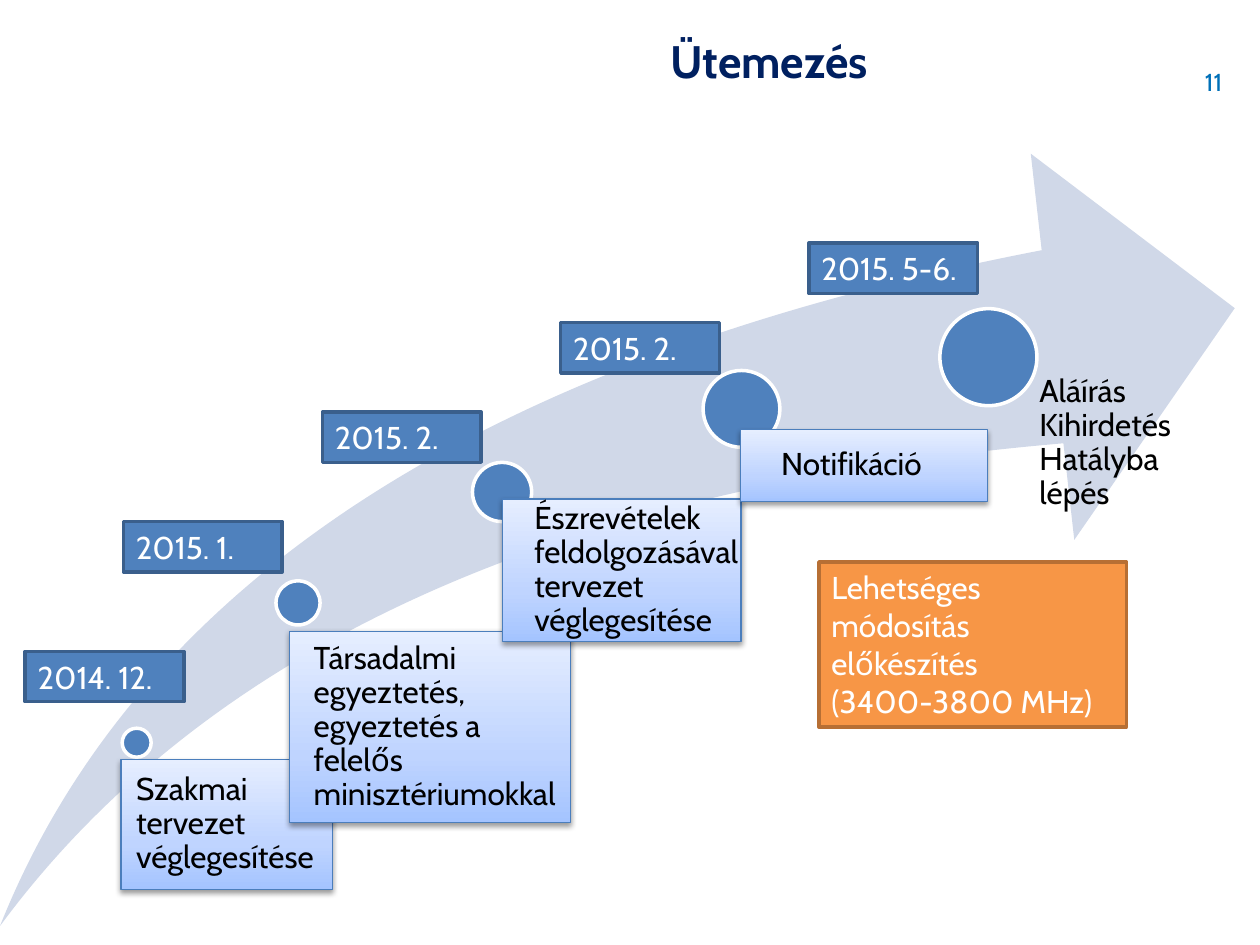
"""Build the "Ütemezés" timeline slide: five growing milestones along a swoosh arrow."""
from copy import deepcopy
from dataclasses import dataclass

from lxml import etree
from pptx import Presentation
from pptx import util as u
from pptx.dml.color import RGBColor
from pptx.enum import shapes, text
from pptx.oxml.ns import qn

FONT = "Cabin"
COLORS = {
    "white": "FFFFFF", "black": "000000", "navy": "002060", "number": "0070B8",
    "arrow": "D0D8E8", "blue": "4F81BD", "blue_edge": "3A5F8C",
    "orange": "F79646", "orange_edge": "B76F34", "card_edge": "4B7EBC",
}
CARD_STOPS = ((0, "A4C4FF"), (0.35, "BFD4FF"), (1, "E6EEFF"))


@dataclass(frozen=True)
class Area:
    left: float
    top: float
    width: float
    height: float

    def lengths(self) -> tuple:
        return tuple(u.Inches(v) for v in (self.left, self.top, self.width, self.height))


@dataclass(frozen=True)
class Milestone:
    date: str
    date_area: Area
    dot: Area
    task: str
    task_area: Area
    indent: float
    framed: bool = True


MILESTONES = (
    Milestone("2014. 12.", Area(0.2, 5.17, 1.26, 0.4), Area(0.97, 5.78, 0.23, 0.23),
              "Szakmai tervezet véglegesítése", Area(0.96, 6.03, 1.68, 1.03), 0.12),
    Milestone("2015. 1.", Area(0.98, 4.14, 1.26, 0.4), Area(2.19, 4.61, 0.35, 0.35),
              "Társadalmi egyeztetés, egyeztetés a felelős minisztériumokkal",
              Area(2.3, 5.01, 2.23, 1.52), 0.19),
    Milestone("2015. 2.", Area(2.56, 3.27, 1.26, 0.4), Area(3.75, 3.67, 0.47, 0.47),
              "Észrevételek feldolgozásával tervezet véglegesítése",
              Area(3.99, 3.96, 1.89, 1.13), 0.25),
    Milestone("2015. 2.", Area(4.45, 2.56, 1.26, 0.4), Area(5.58, 2.94, 0.61, 0.61),
              "Notifikáció", Area(5.88, 3.41, 1.96, 0.57), 0.32),
    Milestone("2015. 5-6.", Area(6.42, 1.93, 1.34, 0.4), Area(7.46, 2.45, 0.77, 0.77),
              "Aláírás Kihirdetés Hatályba lépés", Area(7.84, 2.98, 1.96, 1.72), 0.41, False),
)


def rgb(name: str) -> RGBColor:
    return RGBColor.from_string(COLORS[name])


def write(box, lines: tuple, color: str, size: float = 18, bold: bool = False,
          align=text.PP_ALIGN.LEFT, anchor=text.MSO_ANCHOR.TOP) -> None:
    frame = box.text_frame
    frame.word_wrap = True
    frame.vertical_anchor = anchor
    frame.text = "\n".join(lines)
    for para in frame.paragraphs:
        para.alignment = align
        font = para.font
        font.name, font.size, font.bold = FONT, u.Pt(size), bold
        font.color.rgb = rgb(color)


def add_solid(page, kind, area: Area, fill: str, edge: str | None = None):
    box = page.shapes.add_shape(kind, *area.lengths())
    box.shadow.inherit = False
    box.fill.solid()
    box.fill.fore_color.rgb = rgb(fill)
    if edge:
        box.line.color.rgb = rgb(edge)
        box.line.width = u.Pt(2)
    else:
        box.line.fill.background()
    return box


def add_card(page, area: Area):
    box = page.shapes.add_shape(shapes.MSO_SHAPE.RECTANGLE, *area.lengths())
    box.fill.gradient()
    box.fill.gradient_angle = 90
    properties = box._element.spPr
    stop_list = properties.find(".//" + qn("a:gsLst"))
    stop_list.append(deepcopy(stop_list[0]))
    for stop, (position, color) in zip(box.fill.gradient_stops, CARD_STOPS):
        stop.position = position
        stop.color.rgb = RGBColor.from_string(color)
    box.line.color.rgb = rgb("card_edge")
    box.line.width = u.Pt(0.75)
    box.shadow.inherit = False
    shadow = etree.SubElement(properties.find(qn("a:effectLst")), qn("a:outerShdw"),
                              blurRad="40000", dist="20000", dir="5400000", rotWithShape="0")
    tint = etree.SubElement(shadow, qn("a:srgbClr"), val=COLORS["black"])
    etree.SubElement(tint, qn("a:alpha"), val="38000")
    return box


def add_task(page, step: Milestone) -> None:
    if step.framed:
        box = add_card(page, step.task_area)
        anchor = text.MSO_ANCHOR.MIDDLE
    else:
        box = page.shapes.add_textbox(*step.task_area.lengths())
        anchor = text.MSO_ANCHOR.TOP
    write(box, (step.task,), "black", anchor=anchor)
    frame = box.text_frame
    frame.margin_left = u.Inches(step.indent)
    frame.margin_top = frame.margin_right = frame.margin_bottom = 0
    frame.paragraphs[0].line_spacing = 0.9


def add_note(page, area: Area, lines: tuple, fill: str, edge: str) -> None:
    box = add_solid(page, shapes.MSO_SHAPE.RECTANGLE, area, fill, edge)
    write(box, lines, "white")
    box.text_frame.auto_size = text.MSO_AUTO_SIZE.SHAPE_TO_FIT_TEXT


def main() -> None:
    deck = Presentation()
    deck.slide_width, deck.slide_height = u.Inches(10), u.Inches(7.5)
    page = deck.slides.add_slide(deck.slide_layouts[5])

    title = page.shapes.title
    title.left, title.top, title.width, title.height = Area(3.27, -0.03, 5.67, 1.02).lengths()
    write(title, ("Ütemezés",), "navy", 26, True, text.PP_ALIGN.CENTER, text.MSO_ANCHOR.MIDDLE)

    number = page.shapes.add_textbox(*Area(8.07, 0.48, 1.73, 0.34).lengths())
    write(number, ("11",), "number", 14, align=text.PP_ALIGN.RIGHT)

    arrow = add_solid(page, shapes.MSO_SHAPE.SWOOSH_ARROW, Area(0, 1.22, 9.8, 6.13), "arrow")
    arrow.adjustments[0] = arrow.adjustments[1] = 0.25

    for step in MILESTONES:
        add_solid(page, shapes.MSO_SHAPE.OVAL, step.dot, "blue", "white")
        add_task(page, step)
    for step in MILESTONES:
        add_note(page, step.date_area, (step.date,), "blue", "blue_edge")
    add_note(page, Area(6.5, 4.46, 2.44, 1.31),
             ("Lehetséges módosítás előkészítés", "(3400-3800 MHz)"), "orange", "orange_edge")

    deck.save("out.pptx")


if __name__ == "__main__":
    main()
